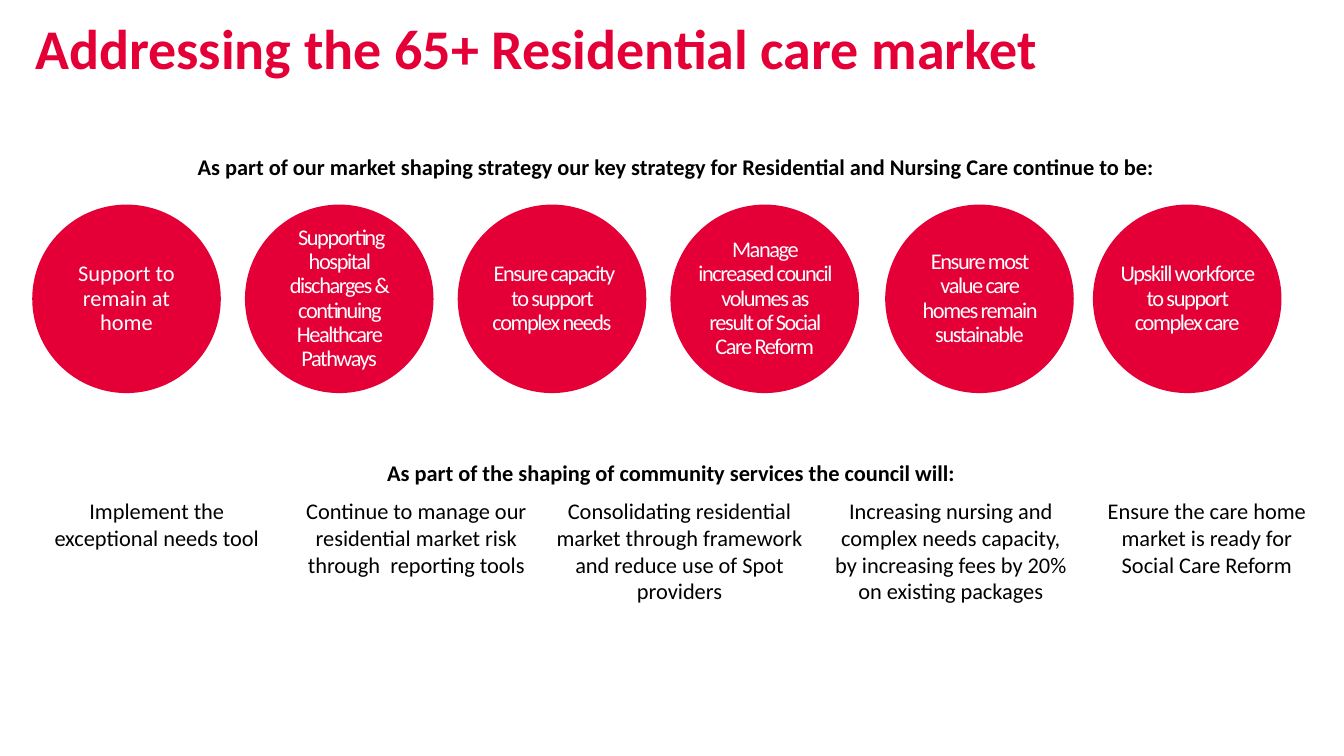
from dataclasses import dataclass

from pptx import Presentation
from pptx.dml.color import RGBColor
from pptx.enum.shapes import MSO_SHAPE
from pptx.enum.text import MSO_ANCHOR, MSO_AUTO_SIZE, PP_ALIGN
from pptx.util import Inches, Pt

COLORS = {"red": "E40037", "white": "FFFFFF", "black": "000000"}
FONT = "Calibri"
CIRCLE_TOP, CIRCLE_SIZE = 2.03, 1.87
ACTION_TOP, ACTION_HEIGHT = 4.93, 1.16
MARGINS = ("margin_left", "margin_top", "margin_right", "margin_bottom")


@dataclass
class Circle:
    left: float
    text: str
    spacing: int = -100


@dataclass
class Label:
    left: float
    top: float
    width: float
    height: float
    text: str
    align: PP_ALIGN = PP_ALIGN.CENTER
    bold: bool = False


CIRCLES = [
    Circle(0.32, "Support to remain at home", 0),
    Circle(2.43, " Supporting hospital discharges & continuing Healthcare Pathways"),
    Circle(4.54, " Ensure capacity to support complex needs"),
    Circle(6.65, "Manage increased council volumes as result of Social Care Reform"),
    Circle(8.78, "Ensure most value care homes remain sustainable"),
    Circle(10.84, "Upskill workforce to support complex care"),
]

HEADINGS = [
    Label(1.96, 1.52, 10.11, 0.59,
          "As part of our market shaping strategy our key strategy for "
          "Residential and Nursing Care continue to be:", PP_ALIGN.LEFT, True),
    Label(3.84, 4.56, 7.94, 0.37,
          "As part of the shaping of community services the council will:",
          PP_ALIGN.LEFT, True),
]

ACTIONS = [
    Label(left, ACTION_TOP, width, ACTION_HEIGHT, text)
    for left, width, text in [
        (0.4, 2.31, "Implement the exceptional needs tool"),
        (2.86, 2.54, "Continue to manage our residential market risk "
                     "through  reporting tools"),
        (5.47, 2.54, "Consolidating residential market through framework "
                     "and reduce use of Spot providers"),
        (8.24, 2.38, "Increasing nursing and complex needs capacity, "
                     "by increasing fees by 20% on existing packages"),
        (10.84, 2.26, "Ensure the care home market is ready for Social Care Reform"),
    ]
]


def set_attrs(target, values: dict) -> None:
    for name, value in values.items():
        setattr(target, name, value)


def write(sp, text: str, color: str, frame: dict, para: dict, font: dict):
    tf = sp.text_frame
    set_attrs(tf, {"word_wrap": True, "auto_size": MSO_AUTO_SIZE.NONE} | frame)
    p = tf.paragraphs[0]
    set_attrs(p, para)
    r = p.add_run()
    r.text = text
    set_attrs(r.font, {"name": FONT, "size": Pt(16)} | font)
    r.font.color.rgb = RGBColor.from_string(COLORS[color])
    return r


def add_title(s, text: str) -> None:
    sp = s.shapes.title
    set_attrs(sp, {"left": Inches(0.25), "top": Inches(0.08),
                   "width": Inches(11.99), "height": Inches(0.99)})
    write(sp, text, "red", {"vertical_anchor": MSO_ANCHOR.TOP},
          {"alignment": PP_ALIGN.LEFT}, {"size": Pt(40), "bold": True})


def add_circle(s, circle: Circle) -> None:
    sp = s.shapes.add_shape(MSO_SHAPE.OVAL, Inches(circle.left), Inches(CIRCLE_TOP),
                            Inches(CIRCLE_SIZE), Inches(CIRCLE_SIZE))
    sp.shadow.inherit = False
    sp.fill.solid()
    sp.fill.fore_color.rgb = RGBColor.from_string(COLORS["red"])
    sp.line.fill.background()
    r = write(sp, circle.text, "white",
              dict.fromkeys(MARGINS, 0) | {"vertical_anchor": MSO_ANCHOR.MIDDLE},
              {"alignment": PP_ALIGN.CENTER, "line_spacing": 0.9}, {})
    if circle.spacing:
        r.font._element.set("spc", str(circle.spacing))


def add_label(s, label: Label) -> None:
    sp = s.shapes.add_textbox(Inches(label.left), Inches(label.top),
                              Inches(label.width), Inches(label.height))
    write(sp, label.text, "black", dict.fromkeys(MARGINS, 0),
          {"alignment": label.align, "space_after": Pt(11.3)}, {"bold": label.bold})


def main() -> None:
    prs = Presentation()
    set_attrs(prs, {"slide_width": Inches(13.33), "slide_height": Inches(7.5)})
    s = prs.slides.add_slide(prs.slide_layouts[5])
    add_title(s, "Addressing the 65+ Residential care market")
    for circle in CIRCLES:
        add_circle(s, circle)
    for label in HEADINGS + ACTIONS:
        add_label(s, label)
    prs.save("out.pptx")


if __name__ == "__main__":
    main()
